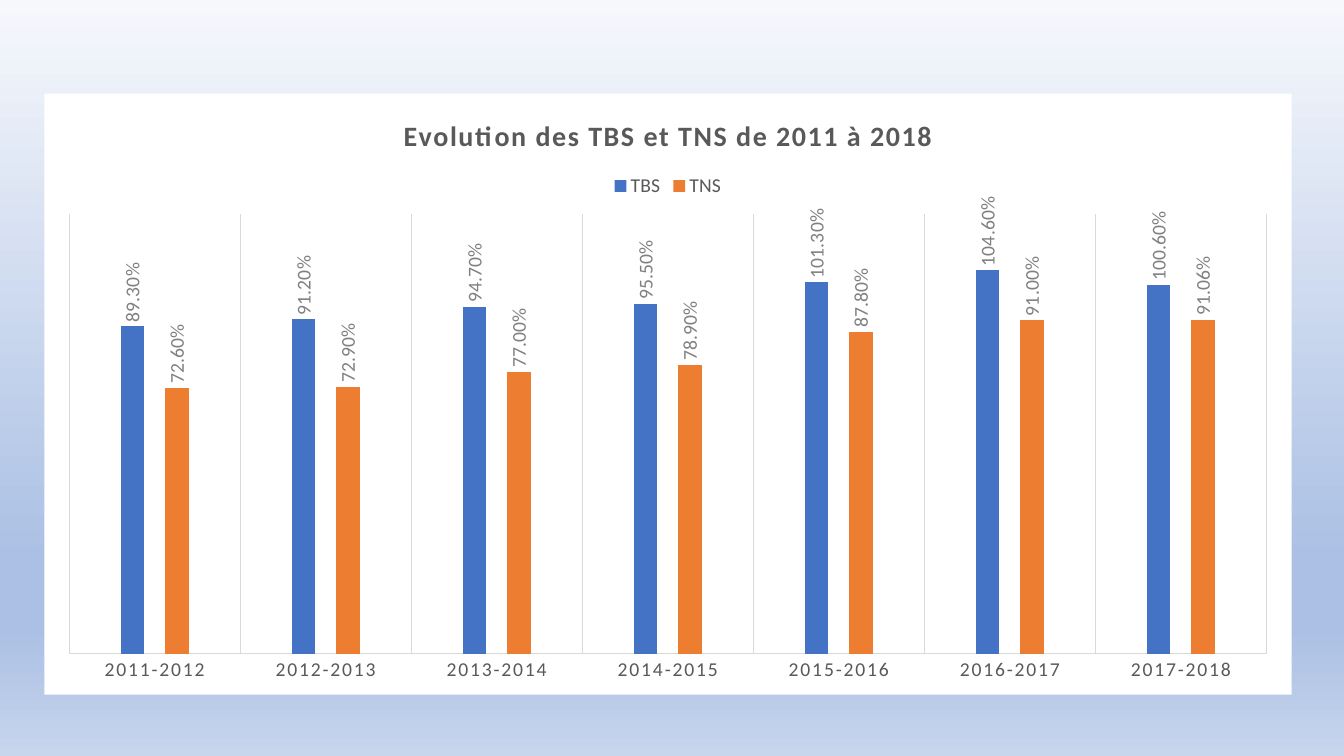
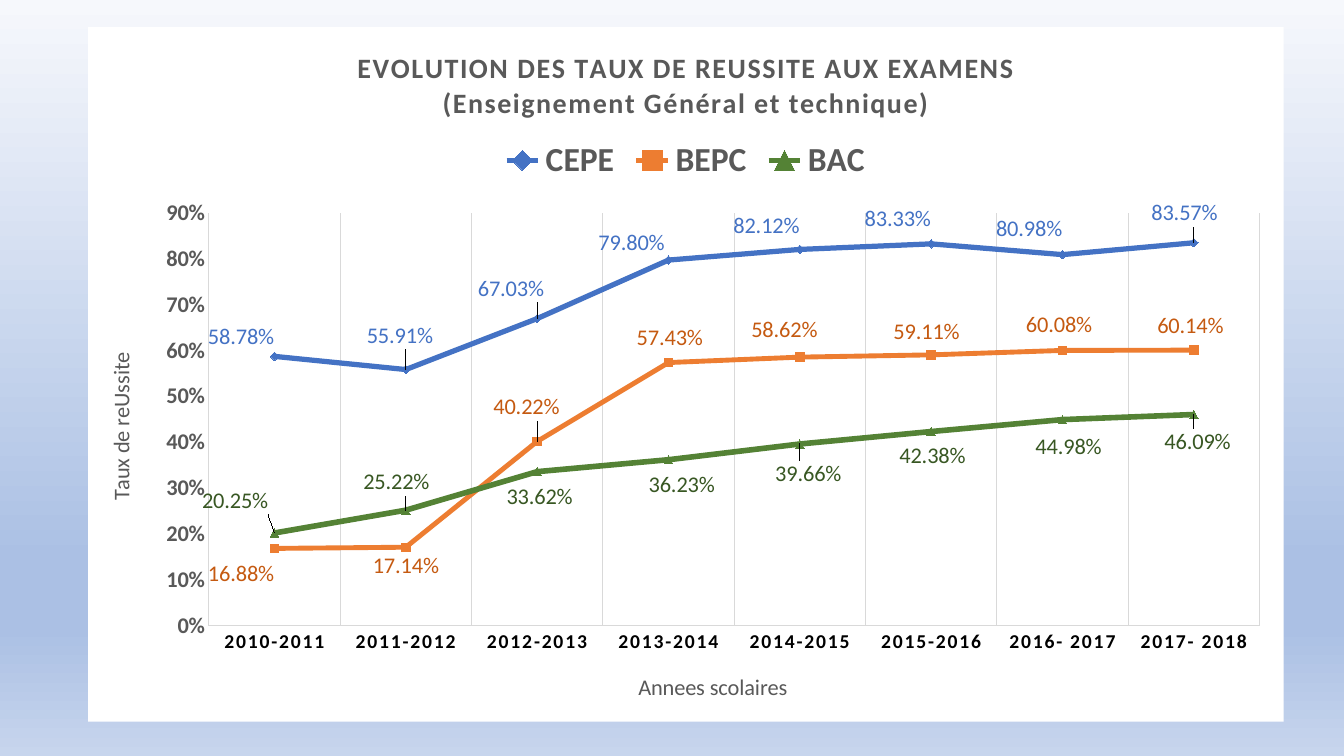
import pptx
import pptx.chart.data
import pptx.dml.color
import pptx.enum.chart
import pptx.oxml
import pptx.oxml.ns
import pptx.util

Colour = pptx.dml.color.RGBColor
Point = pptx.util.Pt
Kind = pptx.enum.chart.XL_CHART_TYPE
Marker = pptx.enum.chart.XL_MARKER_STYLE
LabelPlace = pptx.enum.chart.XL_LABEL_POSITION

FONT = "Calibri"
PERCENT = "0.00%"
BLACK = Colour(0x00, 0x00, 0x00)
WHITE = Colour(0xFF, 0xFF, 0xFF)
DARK_GREY = Colour(0x59, 0x59, 0x59)
MID_GREY = Colour(0x80, 0x80, 0x80)
RULE_GREY = Colour(0xD9, 0xD9, 0xD9)
BLUE = Colour(0x44, 0x72, 0xC4)
ORANGE = Colour(0xED, 0x7D, 0x31)
GREEN = Colour(0x54, 0x82, 0x35)
DARK_ORANGE = Colour(0xC5, 0x5A, 0x11)
DARK_GREEN = Colour(0x38, 0x57, 0x23)
SKY_STOPS = [
    (0, Colour(0xF6, 0xF8, 0xFC)),
    (74, Colour(0xAB, 0xC0, 0xE4)),
    (83, Colour(0xAB, 0xC0, 0xE4)),
    (100, Colour(0xC7, 0xD5, 0xED)),
]

# Chart boxes, as percent of the slide: left, top, width, height
ENROLMENT_BOX = (3.3, 12.4, 92.8, 79.5)
EXAM_BOX = (6.55, 3.6, 88.95, 91.87)

ENROLMENT_YEARS = [f"{year}-{year + 1}" for year in range(2011, 2018)]
ENROLMENT = {
    "TBS": ([0.893, 0.912, 0.947, 0.955, 1.013, 1.046, 1.006], BLUE),
    "TNS": ([0.726, 0.729, 0.77, 0.789, 0.878, 0.91, 0.9106], ORANGE),
}

EXAM_YEARS = [f"{year}-{year + 1}" for year in range(2010, 2016)] + ["2016- 2017", "2017- 2018"]
# Values, line colour, line width, marker, label colour,
# and label shifts from each point as percent of the chart
EXAMS = {
    "CEPE": (
        [0.5878, 0.5591, 0.6703, 0.798, 0.8212, 0.8333, 0.8098, 0.8357],
        BLUE, 3.75, Marker.DIAMOND, BLUE,
        [(-2.8, -2.7), (-0.5, -4.8), (-2.2, -4.3), (-3.1, -2.4),
         (-2.8, -3.3), (-2.8, -3.6), (-2.8, -3.7), (-0.8, -4.2)],
    ),
    "BEPC": (
        [0.1688, 0.1714, 0.4022, 0.5743, 0.5862, 0.5911, 0.6008, 0.6014],
        ORANGE, 3.5, Marker.SQUARE, DARK_ORANGE,
        [(-2.8, 3.7), (0, 2.7), (-0.9, -4.9), (0.1, -3.5),
         (-1.3, -3.9), (-0.4, -3.3), (-0.3, -3.6), (-0.3, -3.5)],
    ),
    "BAC": (
        [0.2025, 0.2522, 0.3362, 0.3623, 0.3966, 0.4238, 0.4498, 0.4609],
        GREEN, 4, Marker.TRIANGLE, DARK_GREEN,
        [(-3.3, -4.6), (-0.8, -4), (0.2, 3.6), (1.1, 3.6),
         (0.7, 4.3), (0.1, 3.5), (0.5, 3.9), (0.3, 4)],
    ),
}


def element(xml):
    """Parse a fragment whose root takes the chart and drawing namespaces."""
    head, rest = xml.split(">", 1)
    slash = "/" if head.endswith("/") else ""
    names = pptx.oxml.ns.nsdecls("c", "a")
    return pptx.oxml.parse_xml(f"{head.rstrip('/')} {names}{slash}>{rest}")


def style_font(font, size, colour, bold=False):
    font.name = FONT
    font.size = Point(size)
    font.bold = bold
    font.color.rgb = colour


def style_line(line, colour=RULE_GREY, width=0.75):
    line.color.rgb = colour
    line.width = Point(width)


def set_attributes(chart, query, **attributes):
    for node in chart.element.xpath(query):
        for name, value in attributes.items():
            node.set(name, value)


def manual_layout(left, top, size=None):
    parts = [("x", left), ("y", top)]
    modes = ""
    if size:
        parts += [("w", size[0]), ("h", size[1])]
        modes = '<c:layoutTarget val="inner"/><c:xMode val="edge"/><c:yMode val="edge"/>'
    values = "".join(f'<c:{name} val="{value / 100:.4f}"/>' for name, value in parts)
    return element(f"<c:layout><c:manualLayout>{modes}{values}</c:manualLayout></c:layout>")


def paint_background(deck):
    """Give the master the sky gradient, from top to bottom."""
    fill = deck.slide_master.background.fill
    fill.gradient()
    fill.gradient_angle = 270
    stops = deck.slide_master.element.xpath(".//p:bg//a:gsLst")[0]
    for stop in list(stops):
        stops.remove(stop)
    for share, colour in SKY_STOPS:
        stops.append(element(
            f'<a:gs pos="{share * 1000}"><a:srgbClr val="{colour}"/></a:gs>'))


def set_title(chart, lines):
    frame = chart.chart_title.text_frame
    frame.text = "\n".join(lines)
    for para in frame.paragraphs:
        style_font(para.font, 20, DARK_GREY, bold=True)
    chart.chart_title.include_in_layout = False
    set_attributes(chart, "c:chart/c:title//a:defRPr", spc="100")


def set_axis_title(axis, text):
    frame = axis.axis_title.text_frame
    frame.text = text
    style_font(frame.paragraphs[0].font, 16, DARK_GREY)


def add_chart_panel(deck, box, kind, years, data, title, plot, legend_size, category_style):
    """Add a slide with one white chart panel and its shared parts."""
    page = deck.slides.add_slide(deck.slide_layouts[6])
    chart_data = pptx.chart.data.CategoryChartData(number_format=PERCENT)
    chart_data.categories = years
    for name, (values, *_) in data.items():
        chart_data.add_series(name, values)
    sides = (deck.slide_width, deck.slide_height) * 2
    place = [round(side * share / 100) for side, share in zip(sides, box)]
    chart = page.shapes.add_chart(kind, *place, chart_data).chart
    style_font(chart.font, 14, BLACK)
    chart.plots[0].vary_by_categories = False
    set_title(chart, title)

    # White panel
    chart.element.xpath("c:chart")[0].addnext(element(
        f'<c:spPr><a:solidFill><a:srgbClr val="{WHITE}"/></a:solidFill>'
        "<a:ln><a:noFill/></a:ln></c:spPr>"))

    # Plot area
    area = chart.element.xpath("c:chart/c:plotArea")[0]
    for old in area.xpath("c:layout"):
        area.remove(old)
    left, top, width, height = plot
    area.insert(0, manual_layout(left, top, (width, height)))
    if not area.xpath("c:valAx/c:crossBetween"):
        area.xpath("c:valAx/c:crosses")[0].addnext(
            element('<c:crossBetween val="between"/>'))

    # Legend
    chart.has_legend = True
    chart.legend.position = pptx.enum.chart.XL_LEGEND_POSITION.TOP
    chart.legend.include_in_layout = False
    style_font(chart.legend.font, legend_size, DARK_GREY, bold=legend_size > 20)

    # Axes
    no_tick = pptx.enum.chart.XL_TICK_MARK.NONE
    for axis in (chart.category_axis, chart.value_axis):
        axis.major_tick_mark = axis.minor_tick_mark = no_tick
        style_line(axis.format.line)
    chart.category_axis.has_major_gridlines = True
    style_line(chart.category_axis.major_gridlines.format.line)
    style_font(chart.category_axis.tick_labels.font, 14, *category_style)
    set_attributes(chart, ".//c:catAx/c:txPr//a:defRPr", spc="120")
    chart.value_axis.has_major_gridlines = False
    chart.value_axis.minimum_scale = 0
    return chart


def add_enrolment_slide(deck):
    chart = add_chart_panel(
        deck, ENROLMENT_BOX, Kind.COLUMN_CLUSTERED, ENROLMENT_YEARS, ENROLMENT,
        ["Evolution des TBS et TNS de 2011 à 2018"],
        (2, 20, 96, 73.2), 14, (DARK_GREY, False))
    chart.value_axis.maximum_scale = 1.2
    chart.value_axis.visible = False
    plot = chart.plots[0]
    plot.gap_width = 444
    plot.overlap = -90

    # Columns with upright labels
    for series in plot.series:
        series.format.fill.solid()
        series.format.fill.fore_color.rgb = ENROLMENT[series.name][1]
        labels = series.data_labels
        labels.show_value = True
        labels.position = LabelPlace.OUTSIDE_END
        labels.number_format = PERCENT
        labels.number_format_is_linked = False
        style_font(labels.font, 14, MID_GREY)
    set_attributes(chart, ".//c:dLbls/c:txPr/a:bodyPr", rot="-5400000", vert="horz")


def add_exam_slide(deck):
    chart = add_chart_panel(
        deck, EXAM_BOX, Kind.LINE_MARKERS, EXAM_YEARS, EXAMS,
        ["EVOLUTION DES TAUX DE REUSSITE AUX EXAMENS", "(Enseignement Général et technique)"],
        (10.1, 26.8, 87.9, 59.4), 24, (BLACK, True))

    # Value scale and axis titles
    scale = chart.value_axis
    scale.maximum_scale = 0.9
    scale.major_unit = 0.1
    scale.tick_labels.number_format = "0%"
    scale.tick_labels.number_format_is_linked = False
    style_font(scale.tick_labels.font, 16, DARK_GREY, bold=True)
    set_axis_title(scale, "Taux de reUssite")
    set_axis_title(chart.category_axis, "Annees scolaires")
    set_attributes(chart, ".//c:valAx/c:title//a:bodyPr", rot="-5400000", vert="horz")

    # Lines, markers and shifted labels
    for series in chart.plots[0].series:
        _, colour, width, marker, label_colour, shifts = EXAMS[series.name]
        series.smooth = False
        style_line(series.format.line, colour, width)
        series.marker.style = marker
        series.marker.size = 6
        series.marker.format.fill.solid()
        series.marker.format.fill.fore_color.rgb = colour
        style_line(series.marker.format.line, colour)
        labels = series.data_labels
        labels.show_value = True
        labels.position = LabelPlace.CENTER
        labels.number_format = PERCENT
        labels.number_format_is_linked = False
        style_font(labels.font, 16, label_colour)
        for index in range(len(shifts)):
            label = series.points[index].data_label
            label.position = LabelPlace.CENTER
            style_font(label.font, 16, label_colour)
    all_shifts = [shift for exam in EXAMS.values() for shift in exam[-1]]
    for index_node, shift in zip(chart.element.xpath(".//c:dLbl/c:idx"), all_shifts):
        index_node.addnext(manual_layout(*shift))


def main():
    deck = pptx.Presentation()
    deck.slide_width = pptx.util.Inches(13.33)
    deck.slide_height = pptx.util.Inches(7.5)
    paint_background(deck)
    add_enrolment_slide(deck)
    add_exam_slide(deck)
    deck.save("out.pptx")


if __name__ == "__main__":
    main()
